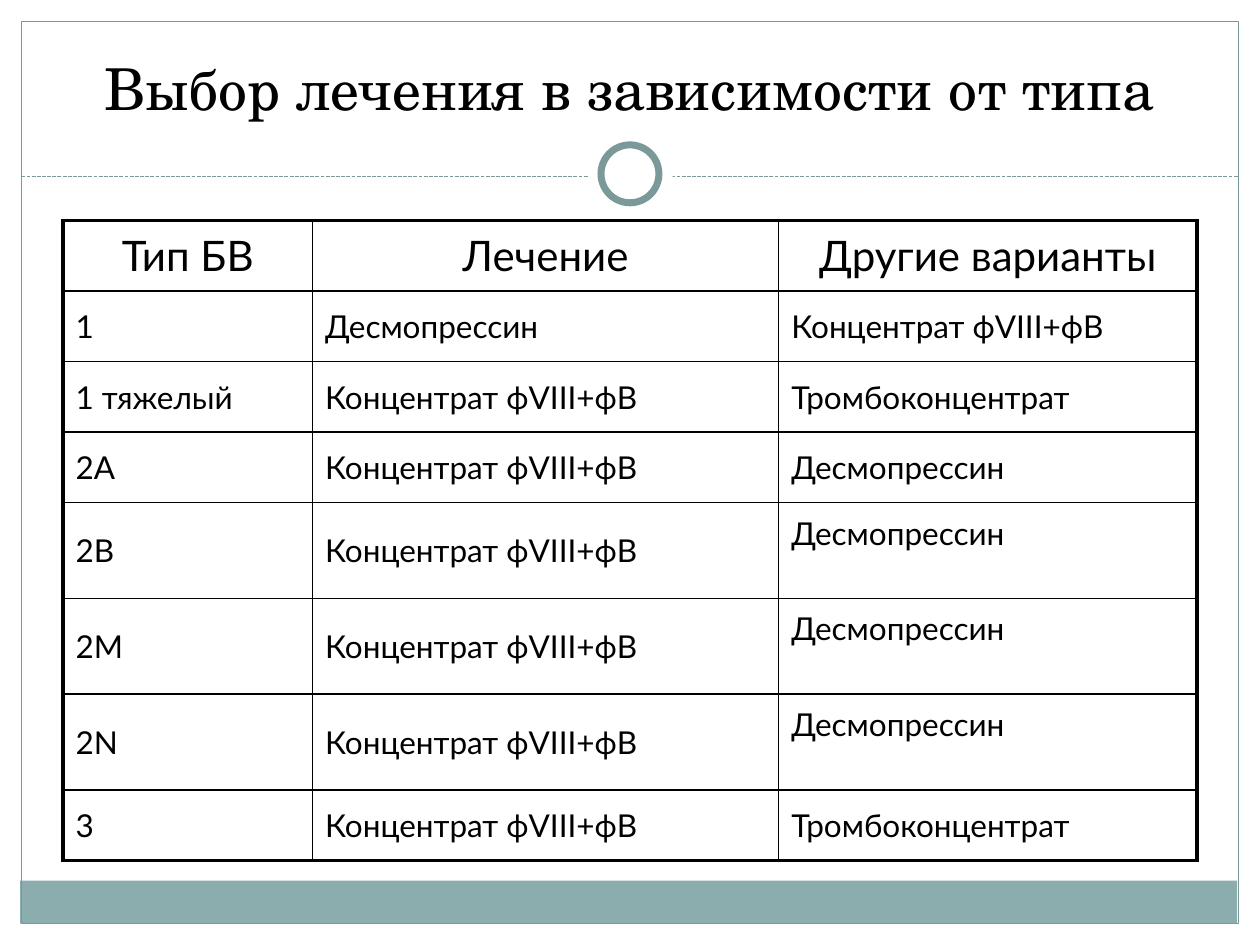
from lxml import etree
from pptx import Presentation
from pptx.dml.color import RGBColor
from pptx.enum.dml import MSO_LINE
from pptx.enum.shapes import MSO_CONNECTOR, MSO_SHAPE
from pptx.enum.text import MSO_ANCHOR, MSO_AUTO_SIZE, PP_ALIGN
from pptx.oxml.ns import qn
from pptx.util import Inches, Pt

BLACK = RGBColor(0x00, 0x00, 0x00)
WHITE = RGBColor(0xFF, 0xFF, 0xFF)
TEAL = RGBColor(0x7C, 0x99, 0x9A)
BAND = RGBColor(0x8C, 0xAD, 0xAE)

TITLE_FONT = "TeX Gyre Schola"
TABLE_FONT = "Lato"
THIN, THICK = 1, 2.25

CONCENTRATE = "Концентрат фVIII+фВ"
DESMOPRESSIN = "Десмопрессин"
PLATELETS = "Тромбоконцентрат"
TREATMENTS = [
    ("Тип БВ", "Лечение", "Другие варианты"),
    ("1", DESMOPRESSIN, CONCENTRATE),
    ("1 тяжелый", CONCENTRATE, PLATELETS),
    ("2А", CONCENTRATE, DESMOPRESSIN),
    ("2В", CONCENTRATE, DESMOPRESSIN),
    ("2М", CONCENTRATE, DESMOPRESSIN),
    ("2N", CONCENTRATE, DESMOPRESSIN),
    ("3", CONCENTRATE, PLATELETS),
]
COLUMN_WIDTHS = [1.98, 3.7, 3.32]
ROW_HEIGHT, TALL_ROW_HEIGHT = 0.56, 0.76
TALL_ROWS = (4, 5, 6)


def style_text(paragraph, font_name, size, alignment):
    paragraph.alignment = alignment
    for run in paragraph.runs:
        run.font.name = font_name
        run.font.size = Pt(size)
        run.font.color.rgb = BLACK


def add_decoration(slide, kind, box, fill=None, line_width=None):
    """Add a shape with an optional fill and an optional teal outline."""
    shape = slide.shapes.add_shape(kind, *map(Inches, box))
    shape.shadow.inherit = False
    if fill is None:
        shape.fill.background()
    else:
        shape.fill.solid()
        shape.fill.fore_color.rgb = fill
    if line_width is None:
        shape.line.fill.background()
    else:
        shape.line.color.rgb = TEAL
        shape.line.width = Pt(line_width)


def add_dashed_rule(slide, left, right, y):
    rule = slide.shapes.add_connector(
        MSO_CONNECTOR.STRAIGHT, Inches(left), Inches(y), Inches(right), Inches(y))
    rule.line.color.rgb = TEAL
    rule.line.width = Pt(0.75)
    rule.line.dash_style = MSO_LINE.SQUARE_DOT
    etree.SubElement(rule.element.spPr, qn("a:effectLst"))


def add_frame(slide):
    add_decoration(slide, MSO_SHAPE.RECTANGLE, (0.16, 6.99, 9.66, 0.34), fill=BAND)
    add_decoration(slide, MSO_SHAPE.RECTANGLE, (0.17, 0.17, 9.66, 7.16), line_width=0.75)
    add_dashed_rule(slide, 0.17, 9.83, 1.4)
    add_decoration(slide, MSO_SHAPE.OVAL, (4.67, 1.05, 0.67, 0.67), fill=WHITE)
    add_decoration(slide, MSO_SHAPE.OVAL, (4.77, 1.15, 0.46, 0.46), WHITE, 4)


def set_title(slide, text):
    title = slide.shapes.title
    title.left, title.top = Inches(0.5), Inches(0.32)
    title.width, title.height = Inches(9), Inches(0.7)
    frame = title.text_frame
    frame.text = text
    frame.auto_size = MSO_AUTO_SIZE.NONE
    frame.vertical_anchor = MSO_ANCHOR.BOTTOM
    style_text(frame.paragraphs[0], TITLE_FONT, 33, PP_ALIGN.CENTER)


def set_borders(cell, **widths):
    """Draw black borders; the fill must follow them in the cell properties."""
    properties = cell._tc.get_or_add_tcPr()
    for position, (side, width) in enumerate(widths.items()):
        border = etree.Element(qn(f"a:ln{side}"), w=str(Pt(width)))
        fill = etree.SubElement(border, qn("a:solidFill"))
        etree.SubElement(fill, qn("a:srgbClr"), val=str(BLACK))
        properties.insert(position, border)


def fill_cell(cell, text, row, column):
    cell.text = text
    cell.fill.background()
    cell.vertical_anchor = MSO_ANCHOR.MIDDLE
    last_column = len(COLUMN_WIDTHS) - 1
    if row in TALL_ROWS and column == last_column:
        cell.vertical_anchor = MSO_ANCHOR.TOP
        cell.margin_top = Inches(0.09)
    if row == 0:
        size, alignment = 24, PP_ALIGN.CENTER
    else:
        size = 18
        alignment = PP_ALIGN.JUSTIFY if column == 0 else PP_ALIGN.LEFT
    style_text(cell.text_frame.paragraphs[0], TABLE_FONT, size, alignment)
    set_borders(
        cell,
        L=THICK if column == 0 else THIN,
        R=THICK if column == last_column else THIN,
        T=THICK if row == 0 else THIN,
        B=THICK if row == len(TREATMENTS) - 1 else THIN,
    )


def add_treatment_table(slide):
    heights = [TALL_ROW_HEIGHT if row in TALL_ROWS else ROW_HEIGHT
               for row in range(len(TREATMENTS))]
    table = slide.shapes.add_table(
        len(TREATMENTS), len(COLUMN_WIDTHS), Inches(0.5), Inches(1.75),
        Inches(sum(COLUMN_WIDTHS)), Inches(sum(heights))).table
    table.first_row = table.horz_banding = False
    for column, width in zip(table.columns, COLUMN_WIDTHS):
        column.width = Inches(width)
    for row, (height, texts) in enumerate(zip(heights, TREATMENTS)):
        table.rows[row].height = Inches(height)
        for column, text in enumerate(texts):
            fill_cell(table.cell(row, column), text, row, column)


def main():
    presentation = Presentation()
    presentation.slide_width, presentation.slide_height = Inches(10), Inches(7.5)
    slide = presentation.slides.add_slide(presentation.slide_layouts[5])
    add_frame(slide)
    set_title(slide, "Выбор лечения в зависимости от типа")
    add_treatment_table(slide)
    presentation.save("out.pptx")


if __name__ == "__main__":
    main()
